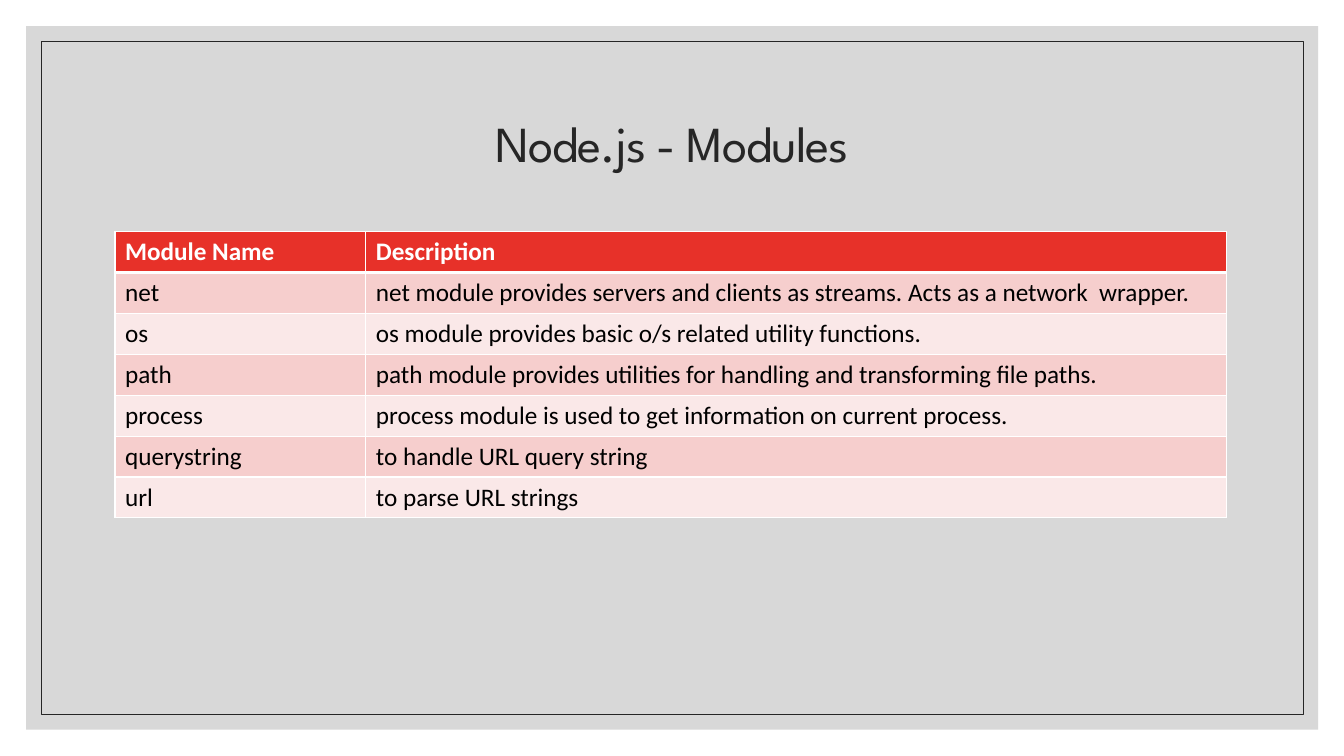
import lxml.etree
import pptx
import pptx.dml.color
import pptx.enum.shapes
import pptx.enum.text
import pptx.oxml.ns
import pptx.util
from pptx.util import Cm

INK = "262626"
WHITE = "FFFFFF"
HEADER_RED = "E73129"
BANDS = ("F6CECD", "FAE8E8")
COLUMN_WIDTHS = (6.32, 21.69)
ROW_HEIGHT = 1.03
MODULES = (
    ("Module Name", "Description"),
    ("net", "net module provides servers and clients as streams. Acts as a network  wrapper."),
    ("os", "os module provides basic o/s related utility functions."),
    ("path", "path module provides utilities for handling and transforming file paths."),
    ("process", "process module is used to get information on current process."),
    ("querystring", "to handle URL query string"),
    ("url", "to parse URL strings"),
)


def rgb(value):
    """Turn a hex string into a colour."""
    return pptx.dml.color.RGBColor.from_string(value)


def add_child(parent, tag, **attributes):
    """Append a DrawingML element to its parent."""
    return lxml.etree.SubElement(parent, pptx.oxml.ns.qn(tag), **attributes)


def style_run(paragraph, font_name, size, color, bold=False):
    """Format the only run of a paragraph and return it."""
    run = paragraph.runs[0]
    run.font.name = font_name
    run.font.size = pptx.util.Pt(size)
    run.font.bold = bold
    run.font.color.rgb = rgb(color)
    return run


def add_rectangle(slide, left, top, width, height):
    """Add a rectangle without shadow."""
    rectangle = slide.shapes.add_shape(
        pptx.enum.shapes.MSO_SHAPE.RECTANGLE, Cm(left), Cm(top), Cm(width), Cm(height))
    rectangle.shadow.inherit = False
    return rectangle


def add_backdrop(slide):
    """Add the translucent grey panel and the thin frame on it."""
    panel = add_rectangle(slide, 0.66, 0.66, 32.56, 17.73)
    panel.fill.solid()
    panel.fill.fore_color.rgb = rgb("BFBFBF")
    panel.line.fill.background()
    tint = panel._element.spPr.find(".//" + pptx.oxml.ns.qn("a:srgbClr"))
    add_child(tint, "a:alpha", val="60000")

    frame = add_rectangle(slide, 1.04, 1.04, 31.8, 16.97)
    frame.fill.background()
    frame.line.color.rgb = rgb(INK)
    frame.line.width = pptx.util.Pt(0.5)


def add_title(slide, text):
    """Add the centred slide title."""
    title = slide.shapes.add_textbox(Cm(2.97), Cm(1.78), Cm(27.94), Cm(3.81))
    title.text_frame.word_wrap = True
    title.text_frame.vertical_anchor = pptx.enum.text.MSO_ANCHOR.MIDDLE
    title.text_frame.text = text
    heading = title.text_frame.paragraphs[0]
    heading.alignment = pptx.enum.text.PP_ALIGN.CENTER
    heading.line_spacing = 0.9
    run = style_run(heading, "League Spartan", 36, INK)
    run._r.get_or_add_rPr().set("spc", "-70")


def set_borders(cell, top, bottom):
    """Give a cell white borders, with top and bottom widths in points."""
    properties = cell._tc.get_or_add_tcPr()
    for side, width in (("L", 1), ("R", 1), ("T", top), ("B", bottom)):
        border = add_child(properties, "a:ln" + side, w=str(pptx.util.Pt(width)))
        add_child(add_child(border, "a:solidFill"), "a:srgbClr", val=WHITE)


def fill_cell(cell, text, row):
    """Write and colour one cell according to its row."""
    header = row == 0
    set_borders(cell, 3 if row == 1 else 1, 3 if header else 1)
    cell.fill.solid()
    cell.fill.fore_color.rgb = rgb(HEADER_RED if header else BANDS[(row - 1) % 2])
    cell.text_frame.text = text
    style_run(cell.text_frame.paragraphs[0], "Calibri", 18,
              WHITE if header else "000000", header)


def add_module_table(slide):
    """Add the table of modules and their descriptions."""
    modules = slide.shapes.add_table(
        len(MODULES), len(COLUMN_WIDTHS), Cm(2.9), Cm(5.84),
        Cm(sum(COLUMN_WIDTHS)), Cm(ROW_HEIGHT * len(MODULES))).table
    for column, width in zip(modules.columns, COLUMN_WIDTHS):
        column.width = Cm(width)
    for row, entry in enumerate(MODULES):
        modules.rows[row].height = Cm(ROW_HEIGHT)
        for column, text in enumerate(entry):
            fill_cell(modules.cell(row, column), text, row)


def main():
    """Build the slide on Node.js modules."""
    deck = pptx.Presentation()
    deck.slide_width, deck.slide_height = Cm(33.87), Cm(19.05)
    slide = deck.slides.add_slide(deck.slide_layouts[6])
    add_backdrop(slide)
    add_title(slide, "Node.js - Modules")
    add_module_table(slide)
    deck.save("out.pptx")


if __name__ == "__main__":
    main()
